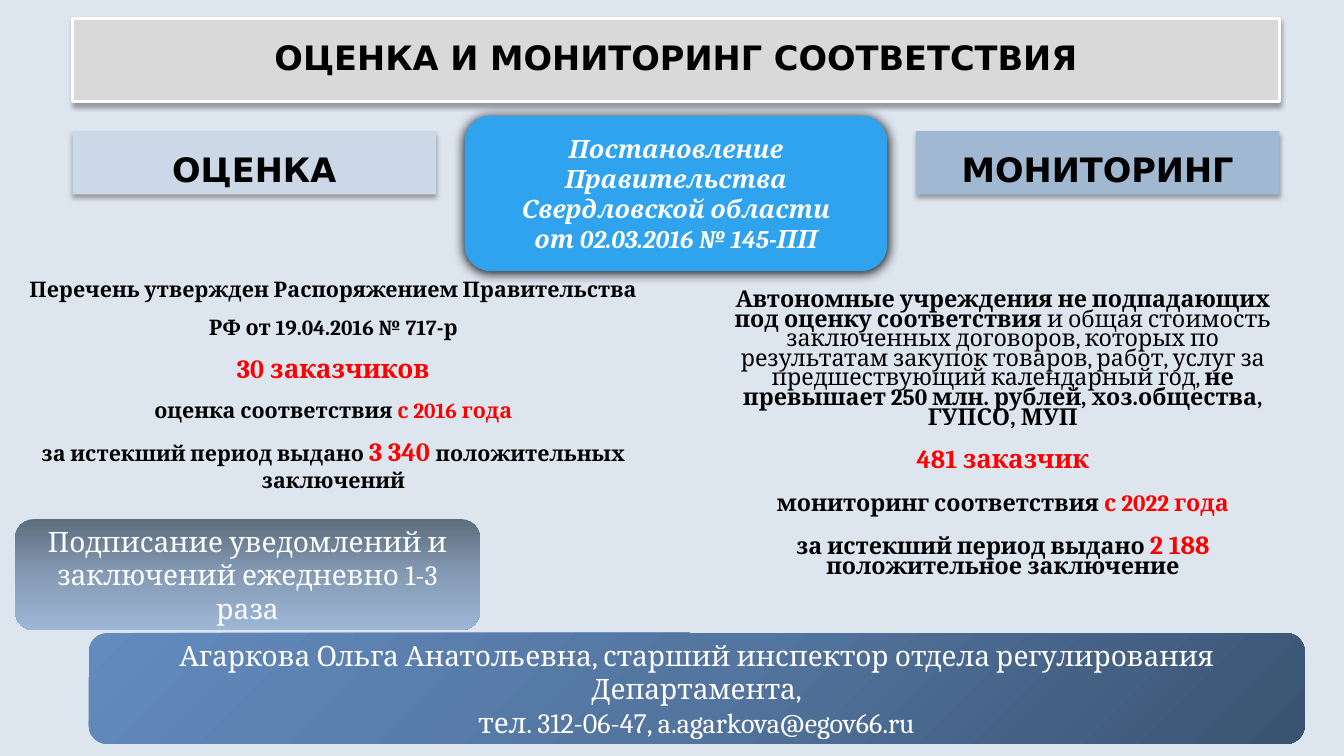
"""Builds a slide on conformity assessment and monitoring."""
from lxml.etree import SubElement
from pptx import Presentation
from pptx.dml.color import RGBColor
from pptx.enum.shapes import MSO_SHAPE
from pptx.enum.text import MSO_ANCHOR, PP_ALIGN
from pptx.oxml import parse_xml
from pptx.oxml.ns import nsdecls, qn
from pptx.util import Inches, Pt

BLACK = RGBColor(0x00, 0x00, 0x00)
WHITE = RGBColor(0xFF, 0xFF, 0xFF)
RED = RGBColor(0xFF, 0x00, 0x00)
BACKGROUND = RGBColor(0xDD, 0xE5, 0xEF)
TITLE_GREY = RGBColor(0xD9, 0xD9, 0xD9)
ASSESSMENT_BLUE = RGBColor(0xCC, 0xD8, 0xE7)
MONITORING_BLUE = RGBColor(0xA1, 0xB8, 0xD3)
DECREE_BLUE = RGBColor(0x2F, 0xA3, 0xEE)

HEADING_FONT = "DejaVu Sans"
TEXT_FONT = "Cambria"
SOFT_SHADOW = (32, 3.5, 2.2)
STRONG_SHADOW = (100, 8.5, 1)

presentation = Presentation()
presentation.slide_width = Inches(13.33)
presentation.slide_height = Inches(7.5)
slide = presentation.slides.add_slide(presentation.slide_layouts[6])
slide.background.fill.solid()
slide.background.fill.fore_color.rgb = BACKGROUND


def place(left, top, width, height):
    """Turn percentages of the slide's size into lengths."""
    across, down = presentation.slide_width / 100, presentation.slide_height / 100
    return [round(length) for length in (left * across, top * down, width * across, height * down)]


def write(shape, paragraphs, size, color, name=TEXT_FONT, bold=False, italic=False,
          anchor=MSO_ANCHOR.MIDDLE, line_spacing=1.0, gap=0):
    """Write paragraphs of (text, own run settings) pairs."""
    frame = shape.text_frame
    frame.word_wrap = True
    frame.vertical_anchor = anchor
    for index, runs in enumerate(paragraphs):
        paragraph = frame.add_paragraph() if index else frame.paragraphs[0]
        paragraph.alignment = PP_ALIGN.CENTER
        paragraph.line_spacing = line_spacing
        if index:
            paragraph.space_before = Pt(gap)
        font = paragraph.font
        font.name, font.size, font.bold, font.italic = name, Pt(size), bold, italic
        font.color.rgb = color
        for text, settings in runs:
            run = paragraph.add_run()
            run.text = text
            if "size" in settings:
                run.font.size = Pt(settings["size"])
            if "color" in settings:
                run.font.color.rgb = settings["color"]
            if "bold" in settings:
                run.font.bold = settings["bold"]


MARGIN, CONTENT, HEADER = 5.4, 89.8, 27.05
EDGE, BAND = 1.13, 14.67
HEADING = {"size": 24, "color": BLACK, "name": HEADING_FONT, "bold": True}
SUBHEADING = {**HEADING, "anchor": MSO_ANCHOR.BOTTOM, "line_spacing": 0.85}
BAND_TEXT = {"size": 20, "color": WHITE}
DECREE_TEXT = {"size": 18, "color": WHITE, "bold": True, "italic": True}

contact_gradient = (
    [(0, "3A5371"), (50, "5375A0"), (100, "638BBE")],
    '<a:path path="circle"><a:fillToRect l="100000" t="100000"/></a:path>',
)
signing_gradient = (
    [(0, "5D6D7F"), (50, "859BB5"), (100, "9EB7D7")],
    '<a:lin ang="5400000" scaled="0"/>',
)

boxes = [
    (MSO_SHAPE.RECTANGLE, (MARGIN, 2.4, CONTENT, 11.07), TITLE_GREY, SOFT_SHADOW,
     ["ОЦЕНКА И МОНИТОРИНГ СООТВЕТСТВИЯ"], {**HEADING, "line_spacing": 0.9}),
    (MSO_SHAPE.RECTANGLE, (MARGIN, 17.33, HEADER, 8.4), ASSESSMENT_BLUE, SOFT_SHADOW,
     ["ОЦЕНКА"], SUBHEADING),
    (MSO_SHAPE.RECTANGLE, (MARGIN + CONTENT - HEADER, 17.33, HEADER, 8.4), MONITORING_BLUE,
     SOFT_SHADOW, ["МОНИТОРИНГ"], SUBHEADING),
    (MSO_SHAPE.ROUNDED_RECTANGLE, (6.6, 83.73, 90.47, BAND), contact_gradient, None,
     ["Агаркова Ольга Анатольевна, старший инспектор отдела регулирования Департамента,",
      "тел. 312-06-47, a.agarkova@egov66.ru"], BAND_TEXT),
    (MSO_SHAPE.ROUNDED_RECTANGLE, (EDGE, 68.67, 34.58, BAND), signing_gradient, None,
     ["Подписание уведомлений и заключений ежедневно 1-3 раза"], BAND_TEXT),
    (MSO_SHAPE.ROUNDED_RECTANGLE, (34.58, 15.33, 31.43, 20.53), DECREE_BLUE, STRONG_SHADOW,
     ["Постановление Правительства Свердловской области", "от 02.03.2016 № 145-ПП"],
     DECREE_TEXT),
]

for preset, position, fill, shadow, lines, style in boxes:
    shape = slide.shapes.add_shape(preset, *place(*position))
    shape.shadow.inherit = False
    shape.fill.solid()
    if isinstance(fill, RGBColor):
        shape.fill.fore_color.rgb = fill
    else:
        stops, direction = fill
        stop_list = "".join(
            f'<a:gs pos="{share * 1000}"><a:srgbClr val="{color}"/></a:gs>' for share, color in stops)
        solid = shape.element.spPr.find(qn("a:solidFill"))
        solid.getparent().replace(solid, parse_xml(
            f'<a:gradFill {nsdecls("a")} rotWithShape="1"><a:gsLst>{stop_list}</a:gsLst>'
            f'{direction}</a:gradFill>'))
    if fill == TITLE_GREY:
        shape.line.color.rgb = WHITE
        shape.line.width = Pt(2.25)
    else:
        shape.line.fill.background()
    if shadow:
        opacity, blur, distance = shadow
        effects = shape.element.spPr.find(qn("a:effectLst"))
        outer = SubElement(effects, qn("a:outerShdw"), blurRad=str(Pt(blur)),
                           dist=str(Pt(distance)), dir="5400000", rotWithShape="0")
        tint = SubElement(outer, qn("a:srgbClr"), val="000000")
        SubElement(tint, qn("a:alpha"), val=str(opacity * 1000))
    write(shape, [[(line, {})] for line in lines], **style)

red = {"color": RED}
assessment_figure = {"color": RED, "size": 18.7}
monitoring_figure = {"color": RED, "size": 18.5}

assessment = slide.shapes.add_textbox(*place(EDGE, 35.87, 47.34, 32.8))
write(assessment, [
    [("Перечень утвержден Распоряжением Правительства", {})],
    [("РФ от 19.04.2016 № 717-р", {})],
    [("30 заказчиков", assessment_figure)],
    [("оценка соответствия ", {}), ("с 2016 года", red)],
    [("за истекший период выдано ", {}), ("3 340 ", assessment_figure),
     ("положительных заключений", {})],
], 15.3, BLACK, bold=True, anchor=MSO_ANCHOR.TOP, gap=9)

monitoring = slide.shapes.add_textbox(*place(53.34, 38, 42.54, 45.33))
write(monitoring, [
    [("Автономные учреждения не подпадающих под оценку соответствия", {}),
     (" и общая стоимость заключенных договоров, которых по результатам закупок товаров, "
      "работ, услуг за предшествующий календарный год, ", {"bold": False}),
     ("не превышает 250 млн. рублей, хоз.общества, ГУПСО, МУП", {})],
    [("481 заказчик", monitoring_figure)],
    [("мониторинг соответствия ", {}), ("с 2022 года", red)],
    [("за истекший период выдано ", {}), ("2 188 ", monitoring_figure),
     ("положительное заключение", {})],
], 16.6, BLACK, bold=True, anchor=MSO_ANCHOR.TOP, line_spacing=0.7, gap=16)

presentation.save("out.pptx")
